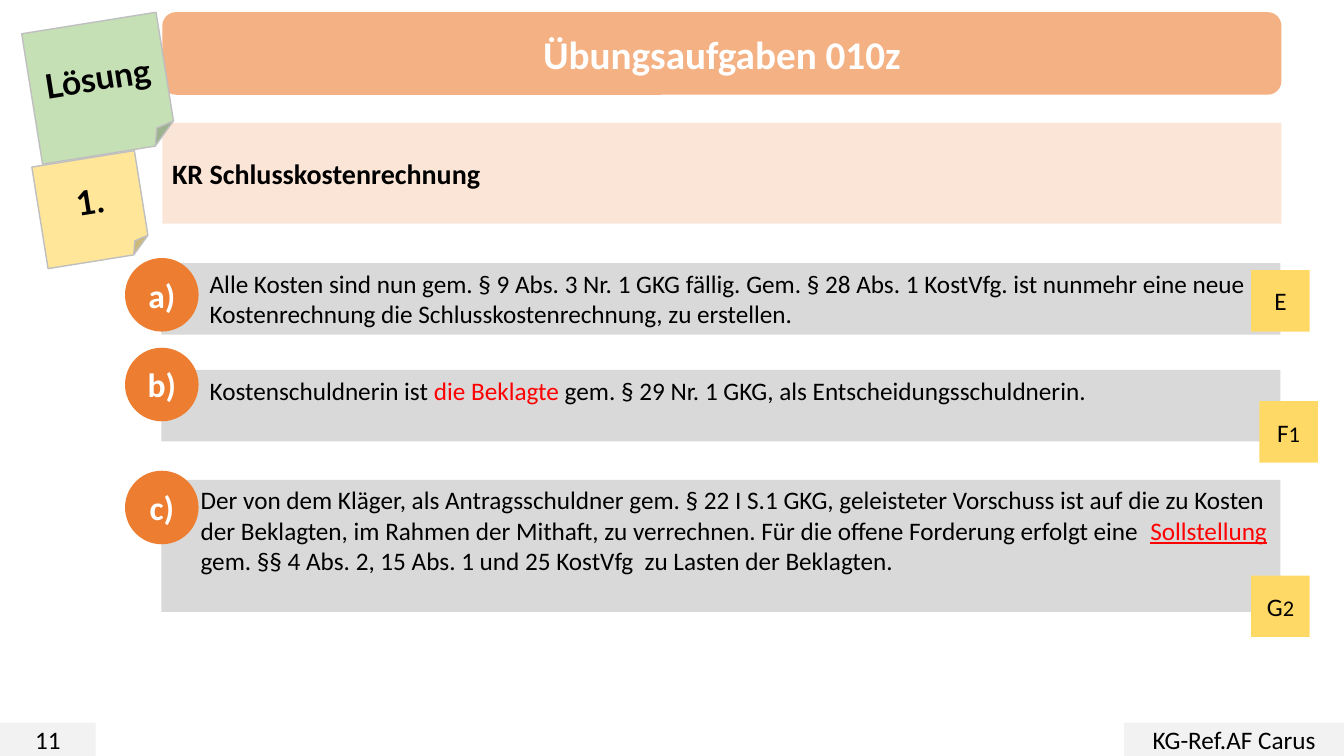
import pptx
import pptx.util
import pptx.dml.color
import pptx.enum.shapes
import pptx.enum.text
from dataclasses import dataclass

Inches = pptx.util.Inches
Shape = pptx.enum.shapes.MSO_SHAPE
Align = pptx.enum.text.PP_ALIGN
Anchor = pptx.enum.text.MSO_ANCHOR


@dataclass(frozen=True)
class Theme:
    font: str = "Calibri"
    note_font: str = "Lato"
    black: str = "000000"
    white: str = "FFFFFF"
    red: str = "FF0000"
    title_fill: str = "F4B183"
    topic_fill: str = "FBE5D6"
    footer_fill: str = "F2F2F2"
    answer_fill: str = "D9D9D9"
    letter_fill: str = "ED7D31"
    tag_fill: str = "FFD966"
    green_note: str = "C5E0B4"
    yellow_note: str = "FFE699"
    note_line: str = "BFBFBF"
    title: int = 28
    label: int = 24
    topic: int = 20
    body: int = 18
    small: int = 16


theme = Theme()
deck = pptx.Presentation()
deck.slide_width = Inches(13.33)
deck.slide_height = Inches(7.5)
page = deck.slides.add_slide(deck.slide_layouts[6])


def add_box(kind, left, top, width, height, fill, inset=0.1):
    """Add a filled, unlined shape with centred-height text settings."""
    box = page.shapes.add_shape(kind, Inches(left), Inches(top), Inches(width), Inches(height))
    box.shadow.inherit = False
    box.fill.solid()
    box.fill.fore_color.rgb = pptx.dml.color.RGBColor.from_string(fill)
    box.line.fill.background()
    frame = box.text_frame
    frame.word_wrap = True
    frame.vertical_anchor = Anchor.MIDDLE
    frame.margin_left = Inches(inset)
    return box


def write(para, text, size, color=theme.black, bold=False, align=Align.CENTER, font=theme.font):
    """Append one styled run to a paragraph."""
    para.alignment = align
    span = para.add_run()
    span.text = text
    span.font.name = font
    span.font.size = pptx.util.Pt(size)
    span.font.bold = bold
    span.font.color.rgb = pptx.dml.color.RGBColor.from_string(color)
    return span


# Topic, footer and title
topic = add_box(Shape.RECTANGLE, 1.61, 1.22, 11.1, 1, theme.topic_fill)
write(topic.text_frame.paragraphs[0], "KR Schlusskostenrechnung", theme.topic, bold=True, align=Align.LEFT)

for left, width, text in [(0, 0.95, "11"), (11.15, 2.18, "KG-Ref.AF Carus")]:
    footer = add_box(Shape.RECTANGLE, left, 7.17, width, 0.33, theme.footer_fill)
    write(footer.text_frame.paragraphs[0], text, theme.body)

title = add_box(Shape.ROUNDED_RECTANGLE, 1.61, 0.12, 11.1, 0.82, theme.title_fill)
write(title.text_frame.paragraphs[0], "Übungsaufgaben 010z", theme.title, theme.white, bold=True)

# Tilted sticky notes
notes = [
    (0.31, 0.22, 1.35, 1.31, theme.green_note, "Lösung"),
    (0.39, 1.57, 1.03, 1.02, theme.yellow_note, "1."),
]
for left, top, width, height, fill, text in notes:
    note = add_box(Shape.FOLDED_CORNER, left, top, width, height, fill)
    note.rotation = 350.9
    note.line.color.rgb = pptx.dml.color.RGBColor.from_string(theme.note_line)
    note.line.width = pptx.util.Pt(1)
    write(note.text_frame.paragraphs[0], text, theme.label, bold=True, font=theme.note_font)

# Answers: letter, bar top, bar height, circle top, text inset, paragraphs of (text, highlighted)
answers = [
    ("a)", 2.61, 0.71, 2.56, 0.48, [
        [("Alle Kosten sind nun gem. § 9 Abs. 3 Nr. 1 GKG fällig. Gem. § 28 Abs. 1 KostVfg. ist nunmehr "
          "eine neue Kostenrechnung die Schlusskostenrechnung, zu erstellen.", False)],
    ]),
    ("b)", 3.67, 0.71, 3.45, 0.48, [
        [("Kostenschuldnerin ist ", False), ("die Beklagte", True),
         (" gem. § 29 Nr. 1 GKG, als Entscheidungsschuldnerin.", False)],
    ]),
    ("c)", 4.76, 1.31, 4.67, 0.39, [
        [("Der von dem Kläger, als Antragsschuldner gem. § 22 I S.1 GKG, geleisteter Vorschuss "
          "ist auf die zu Kosten", False)],
        [("der Beklagten, im Rahmen der Mithaft, zu verrechnen. Für die offene Forderung "
          "erfolgt eine  ", False), ("Sollstellung", True)],
        [("gem. §§ 4 Abs. 2, 15 Abs. 1 und 25 KostVfg  zu Lasten der Beklagten.", False)],
    ]),
]
for letter, top, height, circle_top, inset, lines in answers:
    bar = add_box(Shape.RECTANGLE, 1.6, top, 11.1, height, theme.answer_fill, inset)
    frame = bar.text_frame
    frame.vertical_anchor = Anchor.TOP
    for index, line in enumerate(lines):
        para = frame.add_paragraph() if index else frame.paragraphs[0]
        for text, highlighted in line:
            color = theme.red if highlighted else theme.black
            span = write(para, text, theme.body, color, align=Align.LEFT)
            span.font.underline = text == "Sollstellung"
    circle = add_box(Shape.FLOWCHART_CONNECTOR, 1.24, circle_top, 0.73, 0.73, theme.letter_fill)
    write(circle.text_frame.paragraphs[0], letter, theme.label, theme.white, bold=True)

# Reference tags on the right edge
for left, top, letter, number in [(12.41, 5.71, "G", "2"), (12.49, 3.98, "F", "1"), (12.41, 2.68, "E", "")]:
    tag = add_box(Shape.RECTANGLE, left, top, 0.58, 0.61, theme.tag_fill)
    para = tag.text_frame.paragraphs[0]
    write(para, letter, theme.body)
    if number:
        write(para, number, theme.small)

deck.save("out.pptx")
